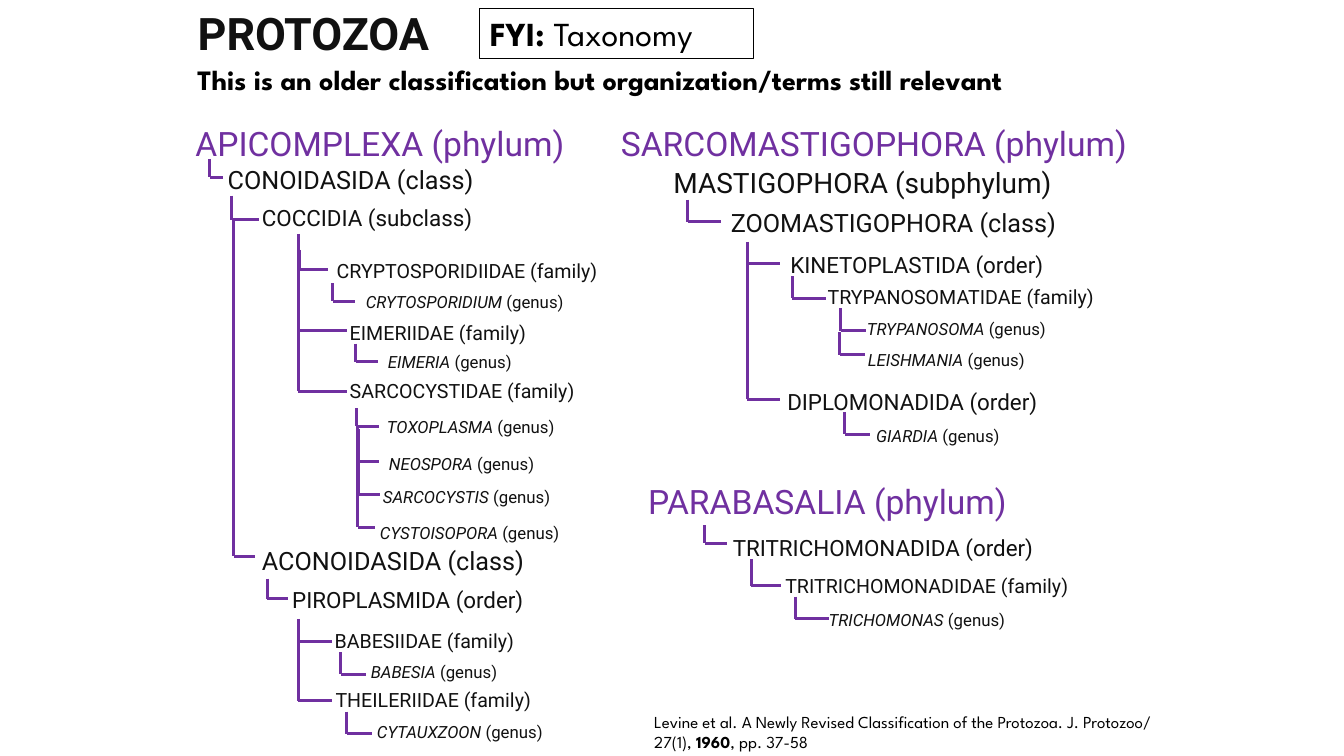
from lxml.etree import SubElement
from pptx import Presentation
from pptx.dml.color import RGBColor
from pptx.enum.shapes import MSO_CONNECTOR, MSO_SHAPE
from pptx.enum.text import MSO_ANCHOR, MSO_AUTO_SIZE, PP_ALIGN
from pptx.oxml.ns import qn
from pptx.util import Pt

PX = 9144
PURPLE, INK, BLACK = "7030A0", "111111", "000000"


def color(code):
    return RGBColor.from_string(code)


def write(shape, box, parts, size, face, code, wrap=True):
    shape.left, shape.top, shape.width, shape.height = [n * PX for n in box]
    frame = shape.text_frame
    frame.word_wrap = wrap
    frame.auto_size = MSO_AUTO_SIZE.SHAPE_TO_FIT_TEXT
    frame.vertical_anchor = MSO_ANCHOR.TOP
    line = frame.paragraphs[0]
    line.alignment = PP_ALIGN.LEFT
    for text, style in parts:
        run = line.add_run()
        run.text = text
        font = run.font
        font.name, font.size = face, Pt(size)
        font.bold, font.italic = style == "bold", style == "italic"
        font.color.rgb = color(code)


deck = Presentation()
deck.slide_width, deck.slide_height = 1333 * PX, 750 * PX
slide = deck.slides.add_slide(deck.slide_layouts[5])
shapes = slide.shapes

write(shapes.title, (186, 1, 905, 64), [("PROTOZOA", "bold")], 32, "Roboto", INK)

elbows = [
    (208, 158, 176, 221), (230, 194, 218, 257), (232, 218, 552, 253),
    (297, 248, 267, 325), (330, 281, 299, 352), (296, 232, 328, 344),
    (353, 341, 359, 375), (296, 268, 388, 344), (354, 405, 423, 376),
    (355, 423, 458, 376), (356, 426, 491, 377), (355, 455, 523, 372),
    (265, 574, 594, 286), (296, 614, 636, 329), (338, 647, 669, 363),
    (296, 636, 695, 329), (344, 706, 728, 369),
    (682, 198, 220, 715), (741, 240, 261, 774), (786, 274, 296, 819),
    (834, 306, 328, 859), (833, 329, 352, 858), (741, 256, 396, 774),
    (838, 409, 431, 863),
    (699, 521, 539, 721), (745, 555, 581, 775), (789, 592, 614, 822),
]
for x, top, low, right in elbows:
    group = shapes.add_group_shape()
    for ends in ((x, top, x, low), (x, low, right, low)):
        link = group.shapes.add_connector(
            MSO_CONNECTOR.STRAIGHT, *[n * PX for n in ends])
        link.line.color.rgb = color(PURPLE)
        link.line.width = Pt(2.25)
        SubElement(link._element.spPr, qn("a:effectLst"))

ranks = {
    "phylum": (24, 50), "subphylum": (20, 44), "class": (18, 40),
    "subclass": (16, 37), "order": (16, 37), "family": (14, 34),
    "genus": (12, 30),
}
taxa = [
    ("APICOMPLEXA", "phylum", 184, 117, 400),
    ("CONOIDASIDA", "class", 216, 158, 277),
    ("COCCIDIA", "subclass", 250, 198, 237),
    ("CRYPTOSPORIDIIDAE", "family", 324, 252, 298),
    ("CRYTOSPORIDIUM", "genus", 353, 285, 235),
    ("EIMERIIDAE", "family", 337, 313, 209),
    ("EIMERIA", "genus", 375, 344, 150),
    ("SARCOCYSTIDAE", "family", 337, 371, 258),
    ("TOXOPLASMA", "genus", 374, 409, 197),
    ("NEOSPORA", "genus", 376, 445, 177),
    ("SARCOCYSTIS", "genus", 370, 478, 202),
    ("CYSTOISOPORA", "genus", 367, 514, 216),
    ("ACONOIDASIDA", "class", 250, 536, 294),
    ("PIROPLASMIDA", "order", 280, 577, 261),
    ("BABESIIDAE", "family", 322, 619, 207),
    ("BABESIA", "genus", 358, 652, 154),
    ("THEILERIIDAE", "family", 323, 678, 224),
    ("CYTAUXZOON", "genus", 364, 711, 197),
    ("SARCOMASTIGOPHORA", "phylum", 606, 117, 553),
    ("MASTIGOPHORA", "subphylum", 658, 159, 410),
    ("ZOOMASTIGOPHORA", "class", 715, 201, 361),
    ("KINETOPLASTIDA", "order", 774, 244, 284),
    ("TRYPANOSOMATIDAE", "family", 811, 278, 297),
    ("TRYPANOSOMA", "genus", 850, 311, 210),
    ("LEISHMANIA", "genus", 851, 342, 183),
    ("DIPLOMONADIDA", "order", 771, 380, 281),
    ("GIARDIA", "genus", 859, 417, 151),
    ("PARABASALIA", "phylum", 633, 472, 388),
    ("TRITRICHOMONADIDA", "order", 717, 525, 336),
    ("TRITRICHOMONADIDAE", "family", 769, 564, 316),
    ("TRICHOMONAS", "genus", 812, 600, 208),
]
for name, rank, x, y, wide in taxa:
    size, high = ranks[rank]
    if rank == "genus":
        parts = [(name, "italic"), (" (genus)", "")]
    else:
        parts = [(f"{name} ({rank})", "")]
    code = PURPLE if rank == "phylum" else INK
    label = shapes.add_textbox(0, 0, 0, 0)
    write(label, (x, y, wide, high), parts, size, "Roboto", code, False)

badge = shapes.add_shape(MSO_SHAPE.RECTANGLE, 0, 0, 0, 0)
badge.shadow.inherit = False
badge.fill.background()
badge.line.color.rgb = color(BLACK)
badge.line.width = Pt(0.75)

notes = [
    (badge, (476, 8, 271, 50), 24, [("FYI: ", "bold"), ("Taxonomy", "")]),
    (shapes.add_textbox(0, 0, 0, 0), (186, 57, 925, 44), 20,
     [("This is an older classification but organization/terms still relevant", "bold")]),
    (shapes.add_textbox(0, 0, 0, 0), (639, 701, 525, 50), 12,
     [("Levine et al. A Newly Revised Classification of the Protozoa. J. Protozoo/ 27(1), ", ""),
      ("1960", "bold"), (", pp. 37-58", "")]),
]
for shape, box, size, parts in notes:
    write(shape, box, parts, size, "League Spartan", BLACK)

deck.save("out.pptx")
